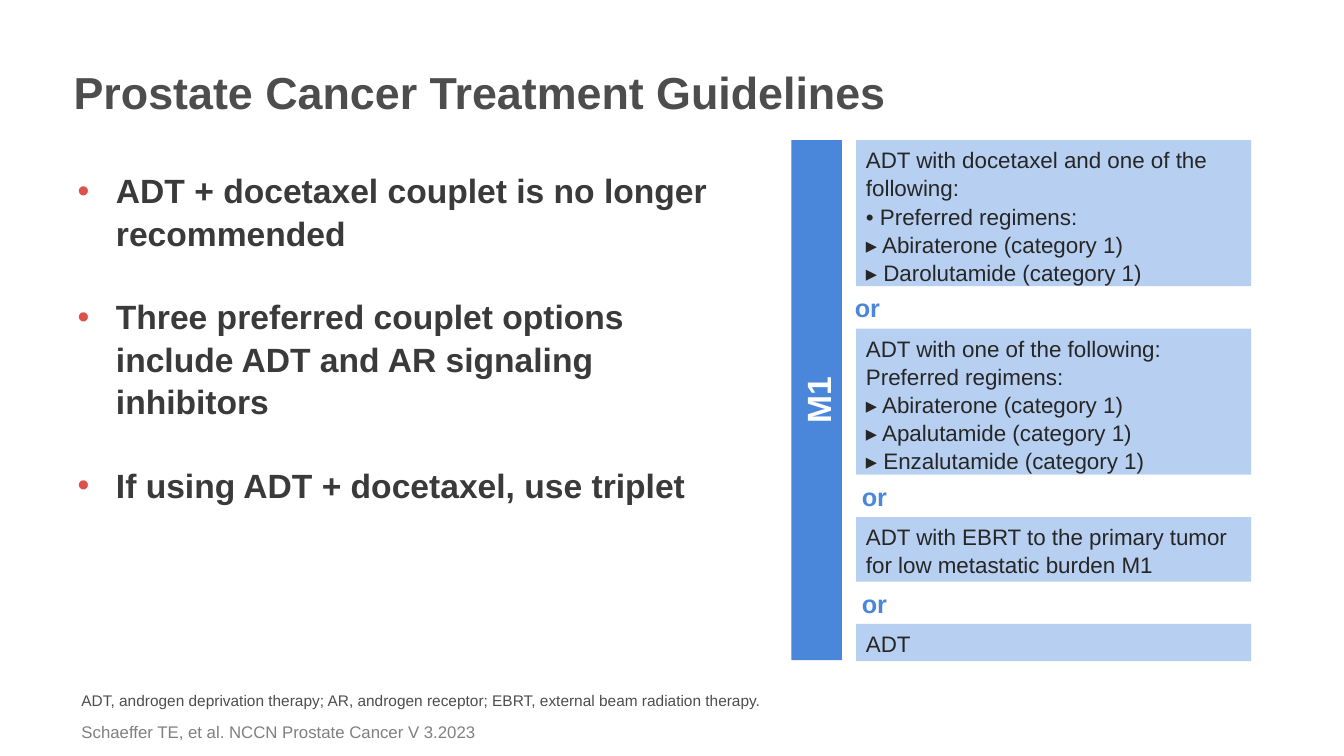
from dataclasses import dataclass

import pptx
import pptx.dml.color
import pptx.enum.shapes
import pptx.enum.text
import pptx.oxml.ns
import pptx.util
from lxml import etree

Inches = pptx.util.Inches
RGBColor = pptx.dml.color.RGBColor
ALIGN = pptx.enum.text.PP_ALIGN
ANCHOR = pptx.enum.text.MSO_ANCHOR

BLUE = RGBColor(0x4A, 0x86, 0xD9)
PALE_BLUE = RGBColor(0xB7, 0xCF, 0xF0)
WHITE = RGBColor(0xFF, 0xFF, 0xFF)
INK = RGBColor(0x26, 0x26, 0x26)
BODY_GREY = RGBColor(0x3A, 0x3A, 0x3A)
DARK_GREY = RGBColor(0x4D, 0x4D, 0x4D)
GREY = RGBColor(0x80, 0x80, 0x80)
BULLET_RED = RGBColor(0xDF, 0x50, 0x4B)

OPTION_LEFT, OPTION_WIDTH = 8.49, 3.92
STACK_TOP, OPTION_GAP = 1.39, 0.42


@dataclass
class Option:
    height: float
    lines: list[str]
    or_left: float | None = None  # left edge of the "or" below


OPTIONS = [
    Option(1.45, ["ADT with docetaxel and one of the following:",
                  "• Preferred regimens:",
                  "▸ Abiraterone (category 1)",
                  "▸ Darolutamide (category 1)"], 8.38),
    Option(1.45, ["ADT with one of the following:",
                  "Preferred regimens:",
                  "▸ Abiraterone (category 1)",
                  "▸ Apalutamide (category 1)",
                  "▸ Enzalutamide (category 1)"], 8.45),
    Option(0.64, ["ADT with EBRT to the primary tumor for low metastatic burden M1"], 8.45),
    Option(0.37, ["ADT"]),
]

KEY_POINTS = [
    "ADT + docetaxel couplet is no longer recommended",
    "Three preferred couplet options include ADT and AR signaling inhibitors",
    "If using ADT + docetaxel, use triplet",
]


def place(sp, left: float, top: float, width: float, height: float) -> None:
    sp.left, sp.top = Inches(left), Inches(top)
    sp.width, sp.height = Inches(width), Inches(height)


def add_bullet(p, color: RGBColor, indent: float) -> None:
    pPr = p._p.get_or_add_pPr()
    pPr.set("marL", str(Inches(indent)))
    pPr.set("indent", str(-Inches(indent)))
    qn = pptx.oxml.ns.qn
    clr = etree.SubElement(pPr, qn("a:buClr"))
    etree.SubElement(clr, qn("a:srgbClr")).set("val", str(color))
    etree.SubElement(pPr, qn("a:buFont")).set("typeface", "Arial")
    etree.SubElement(pPr, qn("a:buChar")).set("char", "•")


def write(sp, lines: list[str], size: float, color: RGBColor, bold: bool = False,
          align=ALIGN.LEFT, anchor=ANCHOR.TOP, wrap: bool = True,
          bullet: RGBColor | None = None, gap: float = 0) -> None:
    tf = sp.text_frame
    tf.word_wrap = wrap
    tf.auto_size = pptx.enum.text.MSO_AUTO_SIZE.NONE
    tf.vertical_anchor = anchor
    for i, line in enumerate(lines):
        p = tf.add_paragraph() if i else tf.paragraphs[0]
        if bullet is not None:
            add_bullet(p, bullet, 0.38)
        p.alignment = align
        p.line_spacing = 1.05
        p.space_before = pptx.util.Pt(gap if i else 0)
        r = p.add_run()
        r.text = line
        r.font.name = "Arial"
        r.font.size = pptx.util.Pt(size)
        r.font.bold = bold
        r.font.color.rgb = color


def add_text(s, left: float, top: float, width: float, height: float,
             text: str, **fmt) -> None:
    sp = s.shapes.add_textbox(Inches(left), Inches(top), Inches(width), Inches(height))
    write(sp, [text], **fmt)


def add_box(s, left: float, top: float, width: float, height: float, fill: RGBColor):
    sp = s.shapes.add_shape(pptx.enum.shapes.MSO_SHAPE.RECTANGLE, Inches(left),
                            Inches(top), Inches(width), Inches(height))
    sp.shadow.inherit = False
    sp.fill.solid()
    sp.fill.fore_color.rgb = fill
    sp.line.fill.background()
    return sp


def main() -> None:
    prs = pptx.Presentation()
    prs.slide_width, prs.slide_height = Inches(13.33), Inches(7.5)
    s = prs.slides.add_slide(prs.slide_layouts[1])

    # Title and key points
    title, body = s.shapes.title, s.placeholders[1]
    place(title, 0.63, 0.57, 10.7, 0.64)
    write(title, ["Prostate Cancer Treatment Guidelines"], 32, DARK_GREY, bold=True)
    place(body, 0.67, 1.62, 6.64, 5.16)
    write(body, KEY_POINTS, 24, BODY_GREY, bold=True, bullet=BULLET_RED, gap=29.6)

    # Stage bar, turned to read upwards
    bar = add_box(s, 5.52, 3.72, 5.16, 0.5, BLUE)
    bar.rotation = 270
    write(bar, ["M1"], 24, WHITE, bold=True, align=ALIGN.CENTER, anchor=ANCHOR.MIDDLE)

    # Treatment options, joined by "or"
    top = STACK_TOP
    for option in OPTIONS:
        box = add_box(s, OPTION_LEFT, top, OPTION_WIDTH, option.height, PALE_BLUE)
        write(box, option.lines, 16, INK)
        top += option.height
        if option.or_left is not None:
            add_text(s, option.or_left, top, 0.46, 0.4, "or", size=18, color=BLUE, bold=True)
        top += OPTION_GAP

    # Abbreviations and citation
    add_text(s, 0.71, 6.8, 7.5, 0.29,
             "ADT, androgen deprivation therapy; AR, androgen receptor; "
             "EBRT, external beam radiation therapy.", size=11, color=DARK_GREY)
    add_text(s, 0.71, 7.1, 4.15, 0.3, "Schaeffer TE, et al. NCCN Prostate Cancer V 3.2023",
             size=12, color=GREY, wrap=False)

    prs.save("out.pptx")


if __name__ == "__main__":
    main()
